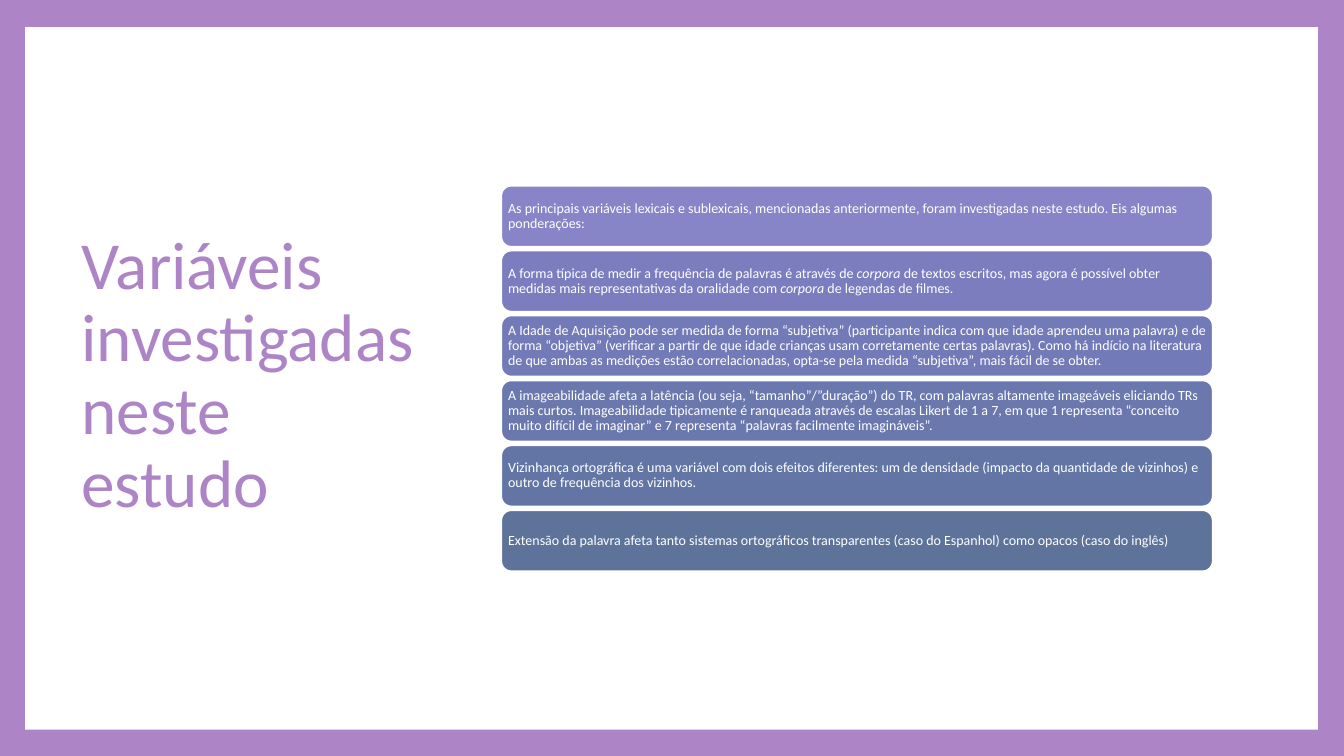
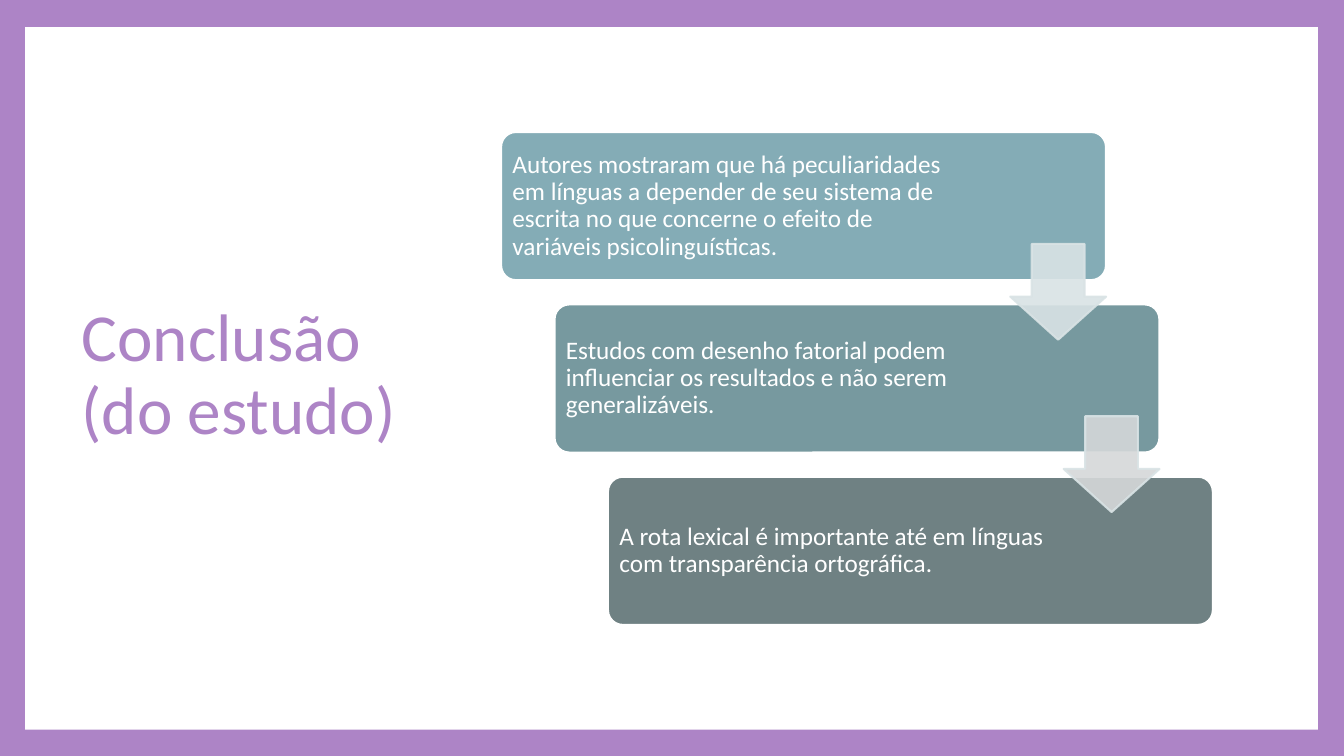
from dataclasses import dataclass

from lxml.etree import SubElement
from pptx import Presentation
from pptx.dml.color import RGBColor
from pptx.enum.shapes import MSO_SHAPE
from pptx.enum.text import MSO_ANCHOR, PP_ALIGN
from pptx.oxml.ns import qn
from pptx.util import Inches, Pt

FONT = "Calibri"
LILAC = RGBColor(0xAD, 0x84, 0xC6)
WHITE = RGBColor(0xFF, 0xFF, 0xFF)
MIST = RGBColor(0xD9, 0xE3, 0xE5)
ASH = RGBColor(0xD5, 0xD8, 0xD9)


@dataclass
class Card:
    fill: RGBColor
    text: str  # italic words stand between asterisks


NOTES = [
    Card(RGBColor(0x87, 0x84, 0xC7),
         "As principais variáveis lexicais e sublexicais, mencionadas anteriormente, "
         "foram investigadas neste estudo. Eis algumas ponderações:"),
    Card(RGBColor(0x7B, 0x7D, 0xBF),
         "A forma típica de medir a frequência de palavras é através de *corpora *de "
         "textos escritos, mas agora é possível obter medidas mais representativas da "
         "oralidade com *corpora *de legendas de filmes."),
    Card(RGBColor(0x72, 0x7A, 0xB7),
         "A Idade de Aquisição pode ser medida de forma “subjetiva” (participante indica "
         "com que idade aprendeu uma palavra) e de forma “objetiva” (verificar a partir "
         "de que idade crianças usam corretamente certas palavras). Como há indício na "
         "literatura de que ambas as medições estão correlacionadas, opta-se pela medida "
         "“subjetiva”, mais fácil de se obter."),
    Card(RGBColor(0x6A, 0x78, 0xAE),
         "A imageabilidade afeta a latência (ou seja, “tamanho”/”duração”) do TR, com "
         "palavras altamente imageáveis eliciando TRs mais curtos. Imageabilidade "
         "tipicamente é ranqueada através de escalas Likert de 1 a 7, em que 1 representa "
         "“conceito muito difícil de imaginar” e 7 representa “palavras facilmente "
         "imagináveis”."),
    Card(RGBColor(0x62, 0x75, 0xA5),
         "Vizinhança ortográfica é uma variável com dois efeitos diferentes: um de "
         "densidade (impacto da quantidade de vizinhos) e outro de frequência dos "
         "vizinhos."),
    Card(RGBColor(0x5D, 0x73, 0x9A),
         "Extensão da palavra afeta tanto sistemas ortográficos transparentes (caso do "
         "Espanhol) como opacos (caso do inglês)"),
]

STEPS = [
    Card(RGBColor(0x84, 0xAC, 0xB6),
         "Autores mostraram que há peculiaridades em línguas a depender de seu sistema "
         "de escrita no que concerne o efeito de variáveis psicolinguísticas."),
    Card(RGBColor(0x77, 0x99, 0x9F),
         "Estudos com desenho fatorial podem influenciar os resultados e não serem "
         "generalizáveis."),
    Card(RGBColor(0x6F, 0x81, 0x83),
         "A rota lexical é importante até em línguas com transparência ortográfica."),
]


def write(shape, text: str, *, size: int, color: RGBColor = WHITE,
          inset: float = 0.04, right: float | None = None) -> None:
    """Fill a shape with left-aligned text; asterisks switch italics."""
    frame = shape.text_frame
    frame.word_wrap = True
    frame.vertical_anchor = MSO_ANCHOR.MIDDLE
    frame.margin_left = frame.margin_top = frame.margin_bottom = Inches(inset)
    frame.margin_right = Inches(inset if right is None else right)
    para = frame.paragraphs[0]
    para.alignment = PP_ALIGN.LEFT
    para.line_spacing = 0.9
    for i, part in enumerate(text.split("*")):
        run = para.add_run()
        run.text = part
        run.font.name = FONT
        run.font.size = Pt(size)
        run.font.color.rgb = color
        run.font.italic = i % 2 == 1


def draw(slide, kind: MSO_SHAPE, left: float, top: float, width: float,
         height: float, fill: RGBColor, line: RGBColor | None = None,
         adjust: tuple[float, ...] = ()):
    shape = slide.shapes.add_shape(
        kind, Inches(left), Inches(top), Inches(width), Inches(height))
    shape.shadow.inherit = False
    shape.fill.solid()
    shape.fill.fore_color.rgb = fill
    if line is None:
        shape.line.fill.background()
    else:
        shape.line.color.rgb = line
        shape.line.width = Pt(1.5)
    for i, value in enumerate(adjust):
        shape.adjustments[i] = value
    return shape


def fade(shape, percent: int) -> None:
    """Set the opacity of fill and line."""
    for color in shape.element.spPr.iter(qn("a:srgbClr")):
        SubElement(color, qn("a:alpha")).set("val", str(percent * 1000))


def start(deck, title: str):
    """Add a slide with the shared frame and title."""
    slide = deck.slides.add_slide(deck.slide_layouts[6])
    slide.background.fill.solid()
    slide.background.fill.fore_color.rgb = LILAC
    draw(slide, MSO_SHAPE.RECTANGLE, 0.25, 0.27, 12.82, 6.97, WHITE)
    box = slide.shapes.add_textbox(
        Inches(0.71), Inches(0.67), Inches(3.68), Inches(6.13))
    write(box, title, size=48, color=LILAC, inset=0.1)
    return slide


def list_notes(deck) -> None:
    slide = start(deck, "Variáveis investigadas neste estudo")
    pitch = 3.22 / (len(NOTES) - 1)
    for i, card in enumerate(NOTES):
        bar = draw(slide, MSO_SHAPE.ROUNDED_RECTANGLE, 4.97, 1.84 + i * pitch,
                   7.06, 0.61, card.fill, WHITE)
        write(bar, card.text, size=10)


def show_steps(deck) -> None:
    slide = start(deck, "Conclusão (do estudo)")
    right, down = 0.53, 1.71
    for i, card in enumerate(STEPS):
        box = draw(slide, MSO_SHAPE.ROUNDED_RECTANGLE, 4.97 + i * right,
                   1.31 + i * down, 6, 1.47, card.fill, WHITE, (0.1,))
        write(box, card.text, size=18, inset=0.07, right=1.57)
    for i, fill in enumerate((MIST, ASH)):
        arrow = draw(slide, MSO_SHAPE.DOWN_ARROW, 10.02 + i * right,
                     2.42 + i * down, 0.95, 0.95, fill, MIST, (0.55, 0.45))
        fade(arrow, 90)


def main() -> None:
    deck = Presentation()
    deck.slide_width, deck.slide_height = Inches(13.33), Inches(7.5)
    list_notes(deck)
    show_steps(deck)
    deck.save("out.pptx")


if __name__ == "__main__":
    main()
